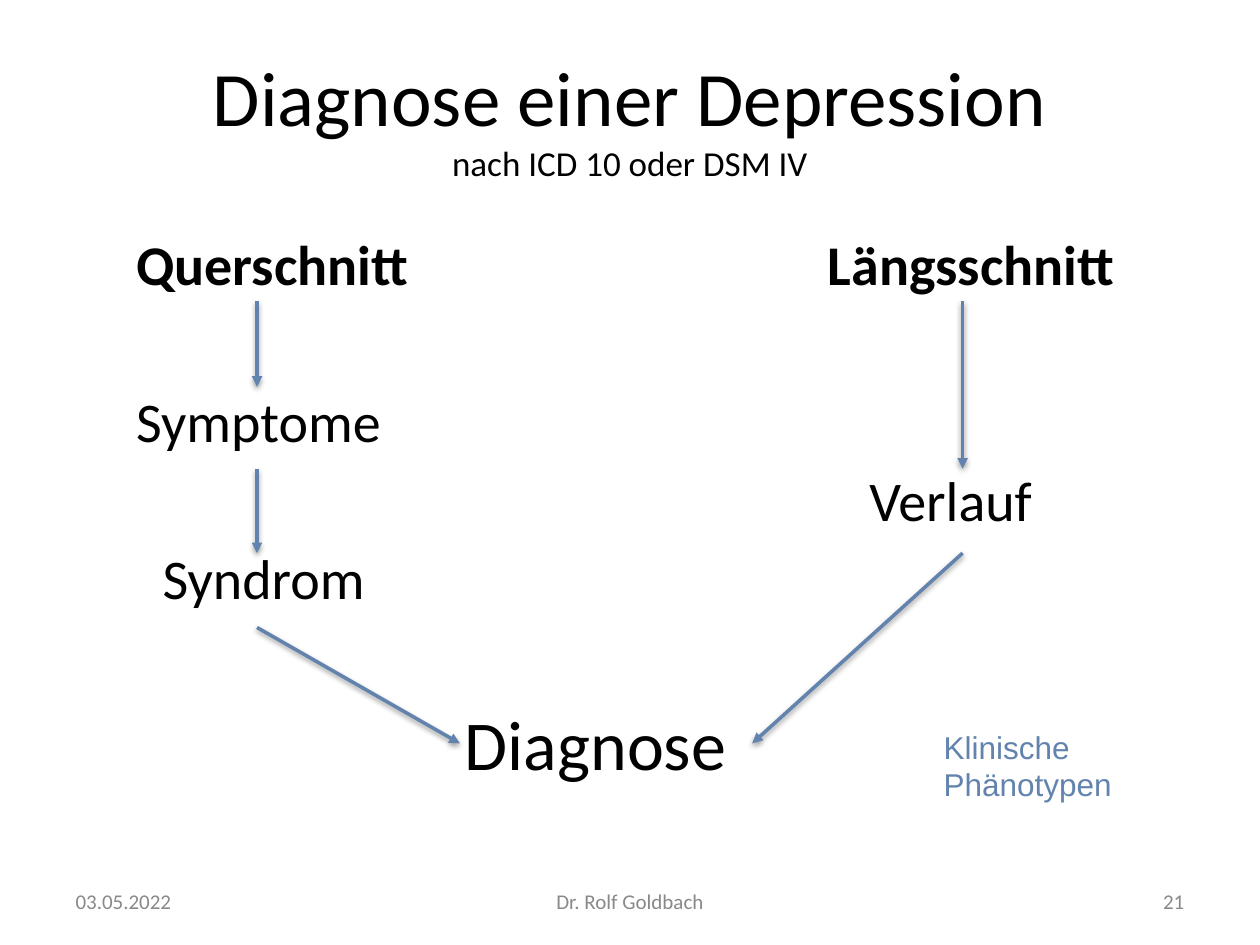
from lxml.etree import SubElement
from pptx import Presentation
from pptx.dml.color import RGBColor
from pptx.enum.shapes import MSO_CONNECTOR
from pptx.enum.text import MSO_ANCHOR, PP_ALIGN
from pptx.oxml import parse_xml
from pptx.oxml.ns import qn
from pptx.util import Inches, Pt

BLACK = RGBColor(0x00, 0x00, 0x00)
GREY = RGBColor(0x89, 0x89, 0x89)
BLUE = RGBColor(0x62, 0x83, 0xAD)
LEFT, CENTER, RIGHT = PP_ALIGN.LEFT, PP_ALIGN.CENTER, PP_ALIGN.RIGHT

SHADOW = (
    '<a:effectLst xmlns:a="http://schemas.openxmlformats.org/drawingml/2006/main">'
    '<a:outerShdw blurRad="40000" dist="20000" dir="5400000" rotWithShape="0">'
    '<a:srgbClr val="000000"><a:alpha val="38000"/></a:srgbClr>'
    '</a:outerShdw></a:effectLst>'
)

prs = Presentation()
prs.slide_width, prs.slide_height = Inches(10), Inches(7.5)
slide = prs.slides.add_slide(prs.slide_layouts[6])

# Grid of 100 columns by 75 rows
COL = prs.slide_width / 100
ROW = prs.slide_height / 75


def add_text(col, row, cols, rows, lines, color=BLACK, align=LEFT, font="Calibri", bold=False):
    """Vertically centred text; lines holds (wording, size) pairs."""
    box = slide.shapes.add_textbox(
        int(col * COL), int(row * ROW), int(cols * COL), int(rows * ROW))
    frame = box.text_frame
    frame.word_wrap = True
    frame.vertical_anchor = MSO_ANCHOR.MIDDLE
    frame.margin_left = frame.margin_right = frame.margin_top = frame.margin_bottom = 0
    for i, (wording, size) in enumerate(lines):
        line = frame.add_paragraph() if i else frame.paragraphs[0]
        line.text = wording
        line.alignment = align
        line.font.name, line.font.size, line.font.bold = font, Pt(size), bold
        line.font.color.rgb = color


# Title
add_text(5, 3, 90, 12.5,
         [("Diagnose einer Depression", 44), ("nach ICD 10 oder DSM IV", 20)], align=CENTER)

# Diagnostic steps, on evenly spaced lines
FIRST_LINE, LINE_STEP, STEP_HEIGHT = 17.9, 6.23, 6
steps = [
    ("Querschnitt", 10.8, 0, 32, True),
    ("Längsschnitt", 65.7, 0, 32, True),
    ("Symptome", 10.8, 2, 32, False),
    ("Verlauf", 69, 3, 32, False),
    ("Syndrom", 12.9, 4, 32, False),
    ("Diagnose", 36.9, 6.1, 40, False),
]
for step, col, line_no, size, bold in steps:
    add_text(col, FIRST_LINE + line_no * LINE_STEP, 26, STEP_HEIGHT, [(step, size)], bold=bold)

# Arrows from both branches down to the diagnosis
CROSS, COURSE = 20.4, 76.4
arrows = [
    (CROSS, 23.9, CROSS, 30.7),
    (CROSS, 37.2, CROSS, 43.9),
    (COURSE, 23.9, COURSE, 37.2),
    (CROSS, 49.8, 36.5, 59),
    (COURSE, 43.9, 59.7, 59),
]
for col1, row1, col2, row2 in arrows:
    arrow = slide.shapes.add_connector(
        MSO_CONNECTOR.STRAIGHT,
        int(col1 * COL), int(row1 * ROW), int(col2 * COL), int(row2 * ROW))
    arrow.line.color.rgb = BLUE
    arrow.line.width = Pt(2)
    SubElement(arrow.line._get_or_add_ln(), qn("a:tailEnd"), type="triangle")
    arrow._element.spPr.append(parse_xml(SHADOW))

# Side note
add_text(74.9, 57.7, 16, 6.1, [("Klinische", 18), ("Phänotypen", 18)], BLUE, font="Arial")

# Footer
for wording, col, cols, align in [
    ("03.05.2022", 6, 21.3, LEFT),
    ("Dr. Rolf Goldbach", 34.2, 31.6, CENTER),
    ("21", 72.7, 21.3, RIGHT),
]:
    add_text(col, 69.5, cols, 4, [(wording, 12)], GREY, align)

prs.save("out.pptx")
